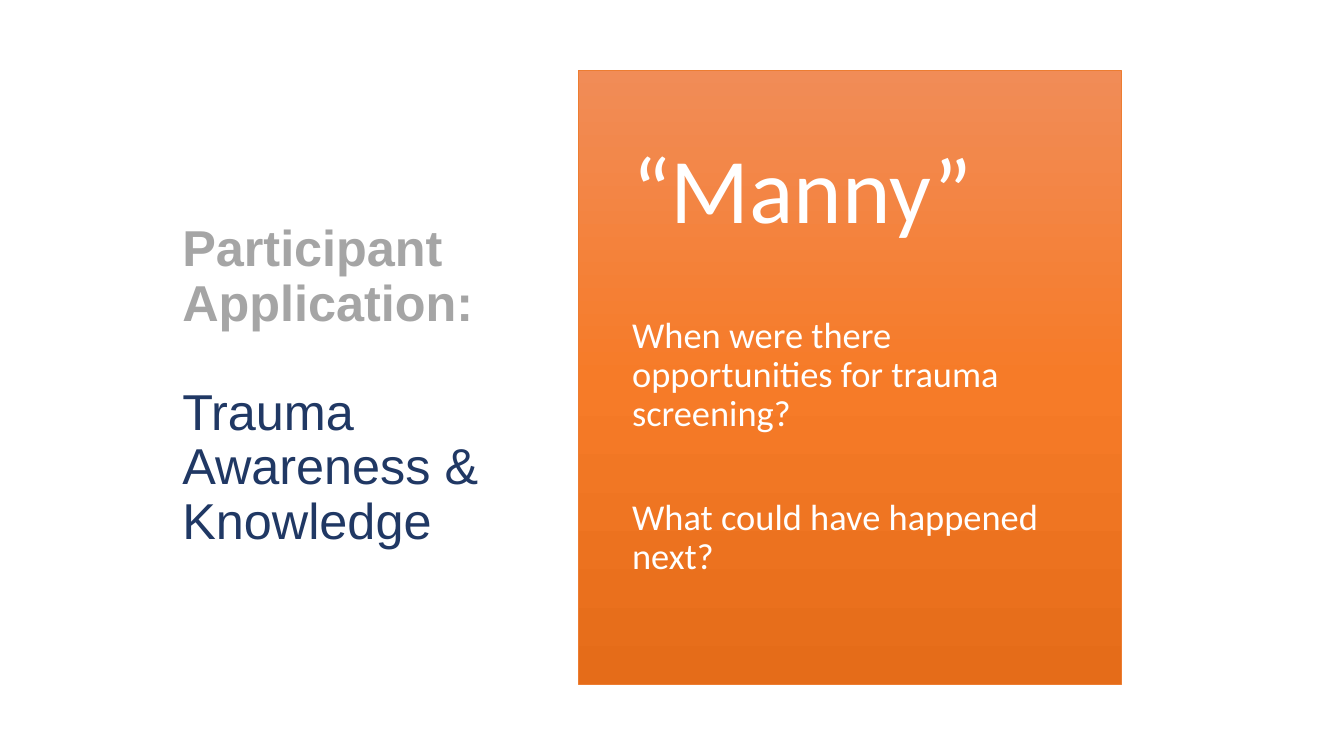
from copy import deepcopy

from pptx import Presentation
from pptx.dml.color import RGBColor
from pptx.enum.shapes import MSO_SHAPE as SHAPE
from pptx.enum.text import MSO_ANCHOR as ANCHOR, MSO_AUTO_SIZE as AUTO, PP_ALIGN as ALIGN
from pptx.util import Cm, Pt


def rgb(value):
    return RGBColor.from_string(value)


def write(sp, frame, lines):
    """Fill a shape with (text, space before, colour, font) lines."""
    tf = sp.text_frame
    frame = {"word_wrap": True, "auto_size": AUTO.NONE, **frame}
    for name, value in frame.items():
        setattr(tf, name, value)
    for i, (text, before, color, font) in enumerate(lines):
        p = tf.paragraphs[0] if i == 0 else tf.add_paragraph()
        p.alignment, p.line_spacing = ALIGN.LEFT, 0.9
        p.space_before, p.space_after = Pt(before), Pt(0)
        r = p.add_run()
        r.text = text
        r.font.color.rgb = rgb(color)
        for name, value in font.items():
            setattr(r.font, name, value)


prs = Presentation()
prs.slide_width, prs.slide_height = Cm(33.87), Cm(19.05)
s = prs.slides.add_slide(prs.slide_layouts[5])

# Title
title = s.shapes.title
title.left, title.top, title.width, title.height = Cm(4.34), Cm(2.24), Cm(8.89), Cm(15.01)
heading = {"name": "Arial", "size": Pt(36)}
write(title, {"vertical_anchor": ANCHOR.MIDDLE}, [
    ("Participant Application:", 0, "A5A5A5", {**heading, "bold": True}),
    ("Trauma Awareness & Knowledge", 39, "203864", {**heading, "bold": False}),
])

# Orange panel
left, top, width, height = Cm(14.58), Cm(1.78), Cm(13.69), Cm(15.47)
name_height = Cm(6.2)
card = s.shapes.add_group_shape()
panel = card.shapes.add_shape(SHAPE.RECTANGLE, left, top, width, height)
panel.shadow.inherit = False
panel.line.color.rgb = rgb("ED7D31")
panel.line.width = Pt(0.5)
panel.fill.gradient()
panel.fill.gradient_angle = 270
stops = panel.fill._fill._gradFill.gsLst
stops.append(deepcopy(stops[-1]))
gradient = [(0, "F18C57"), (0.5, "F67B28"), (1, "E56C19")]
for stop, (position, color) in zip(panel.fill.gradient_stops, gradient):
    stop.position = position
    stop.color.rgb = rgb(color)

# Questions and case name
sides = {"margin_left": Cm(1.35), "margin_right": Cm(1.35)}
questions = card.shapes.add_textbox(left, top + name_height, width, height - name_height)
body = {"name": "Calibri", "size": Pt(26)}
write(questions, {**sides, "margin_top": 0, "margin_bottom": Cm(0.91)}, [
    ("When were there opportunities for trauma screening?", 0, "FFFFFF", body),
    ("What could have happened next?", 46, "FFFFFF", body),
])
case = card.shapes.add_textbox(left, top, width, name_height)
write(case, {**sides, "margin_top": Cm(0.46), "margin_bottom": Cm(0.46),
             "vertical_anchor": ANCHOR.MIDDLE},
      [("“Manny”", 0, "FFFFFF", {"name": "Calibri", "size": Pt(66)})])

prs.save("out.pptx")
